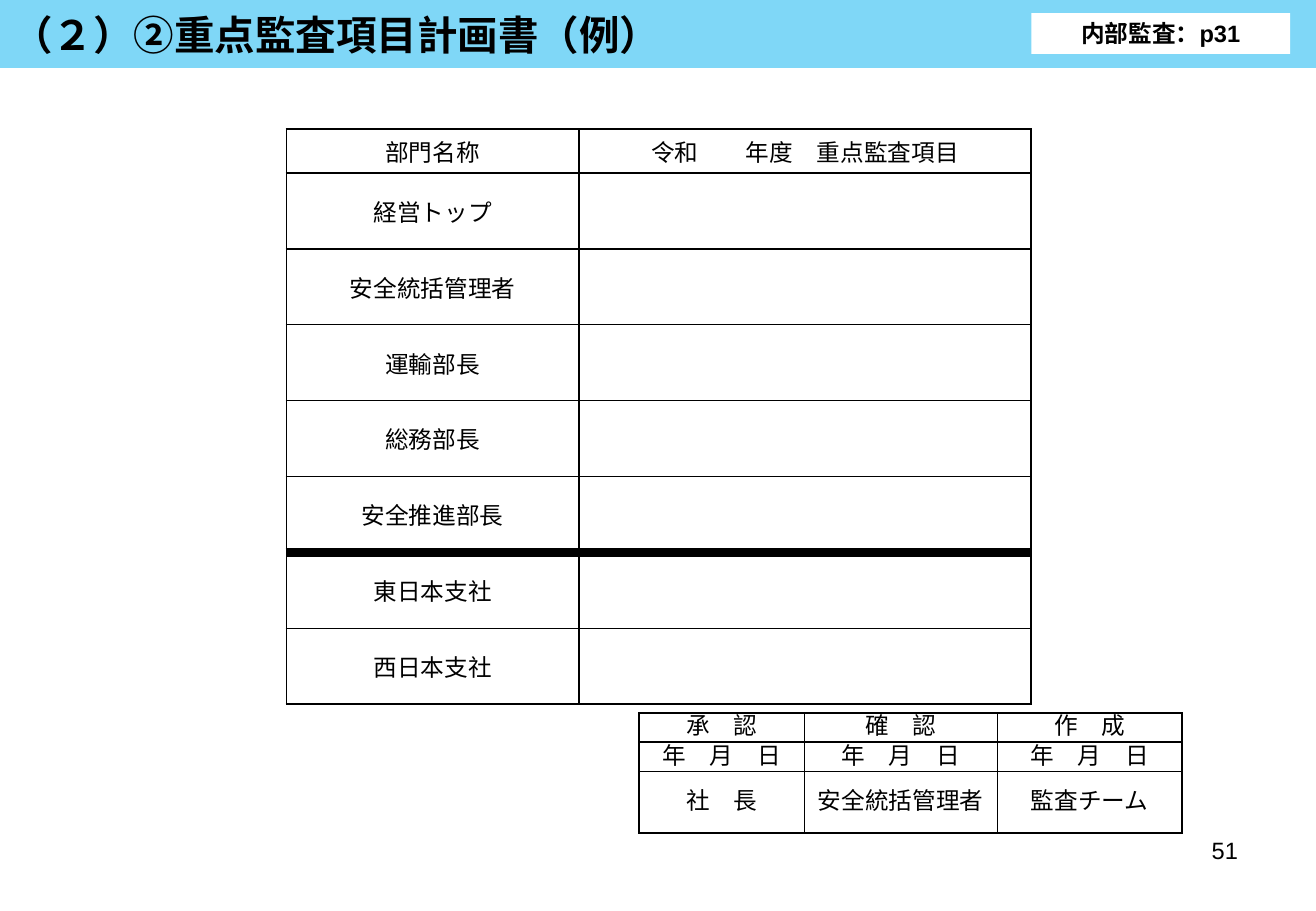
from collections import namedtuple
from dataclasses import dataclass

from lxml import etree
from pptx import Presentation
from pptx.dml.color import RGBColor
from pptx.enum.shapes import MSO_SHAPE
from pptx.enum.text import MSO_ANCHOR, MSO_AUTO_SIZE, PP_ALIGN
from pptx.oxml.ns import qn
from pptx.util import Pt

LEFT, CENTER, RIGHT = PP_ALIGN.LEFT, PP_ALIGN.CENTER, PP_ALIGN.RIGHT
TOP, MIDDLE = MSO_ANCHOR.TOP, MSO_ANCHOR.MIDDLE
RECTANGLE = MSO_SHAPE.RECTANGLE
NO_AUTOFIT = MSO_AUTO_SIZE.NONE
TITLE_ONLY = 5

Box = namedtuple("Box", "left top width height")


@dataclass(frozen=True)
class Theme:
    """Colours, fonts, type sizes and line widths of the deck."""
    ink: str = "000000"
    paper: str = "FFFFFF"
    banner: str = "00B0F0"
    banner_alpha: int = 50
    latin: str = "Arial"
    japanese: str = "Noto Sans CJK JP"
    title_size: int = 24
    body_size: int = 14
    thin: float = 1
    header_rule: float = 1.5
    branch_rule: float = 6
    cell_inset: float = 5


THEME = Theme()

DEPARTMENTS = ["経営トップ", "安全統括管理者", "運輸部長", "総務部長",
               "安全推進部長", "東日本支社", "西日本支社"]
PLAN_ROWS = [["部門名称", "令和　　年度　重点監査項目"]] + [[name, ""] for name in DEPARTMENTS]
PLAN_RULES = {1: THEME.header_rule, 6: THEME.branch_rule}
APPROVAL_ROWS = [["承　認", "確　認", "作　成"],
                 ["年　月　日"] * 3,
                 ["社　長", "安全統括管理者", "監査チーム"]]


def points(box):
    """Turn a box of point values into lengths."""
    return [Pt(value) for value in box]


def format_text(frame, align, size, latin=THEME.latin, bold=False):
    """Align the paragraphs and style every run."""
    for para in frame.paragraphs:
        para.alignment = align
        for span in para.runs:
            span.font.size = Pt(size)
            span.font.bold = bold
            span.font.name = latin
            span.font.color.rgb = RGBColor.from_string(THEME.ink)
            east_asian = etree.Element(qn("a:ea"), typeface=THEME.japanese)
            span.font._element.find(qn("a:latin")).addnext(east_asian)


def add_banner(page, box):
    """Place the title on a translucent band."""
    title = page.shapes.title
    title.left, title.top, title.width, title.height = points(box)
    title.fill.solid()
    title.fill.fore_color.rgb = RGBColor.from_string(THEME.banner)
    colour = title._element.find(".//" + qn("a:srgbClr"))
    etree.SubElement(colour, qn("a:alpha"), val=str(THEME.banner_alpha * 1000))
    frame = title.text_frame
    frame.text = "（２）②重点監査項目計画書（例）"
    frame.auto_size = NO_AUTOFIT
    frame.vertical_anchor = MIDDLE
    format_text(frame, LEFT, THEME.title_size, bold=True)


def add_reference(page, box):
    """Place the white label that names the manual page."""
    label = page.shapes.add_shape(RECTANGLE, *points(box))
    label.shadow.inherit = False
    label.fill.solid()
    label.fill.fore_color.rgb = RGBColor.from_string(THEME.paper)
    label.line.fill.background()
    label.text_frame.text = "内部監査：p31"
    label.text_frame.vertical_anchor = MIDDLE
    format_text(label.text_frame, CENTER, THEME.body_size, bold=True)


def add_page_number(page, box):
    """Place the page number at the right of its box."""
    frame = page.shapes.add_textbox(*points(box)).text_frame
    frame.word_wrap = True
    frame.vertical_anchor = TOP
    frame.text = "51"
    format_text(frame, RIGHT, THEME.body_size)


def draw_borders(cell, top, bottom):
    """Rule all four sides of a cell."""
    properties = cell._tc.get_or_add_tcPr()
    sides = {"L": THEME.thin, "R": THEME.thin, "T": top, "B": bottom}
    for side, width in sides.items():
        line = etree.SubElement(properties, qn("a:ln" + side), w=str(Pt(width)))
        fill = etree.SubElement(line, qn("a:solidFill"))
        etree.SubElement(fill, qn("a:srgbClr"), val=THEME.ink)


def add_grid(page, box, rows, widths, heights, rules, line_height=None):
    """Place a ruled table whose rules map a row to the width above it."""
    table = page.shapes.add_table(len(rows), len(widths), *points(box)).table
    table.first_row = False
    table.horz_banding = False
    for column, width in zip(table.columns, widths):
        column.width = Pt(width)
    for index, (row, height, texts) in enumerate(zip(table.rows, heights, rows)):
        row.height = Pt(height)
        top = rules.get(index, THEME.thin)
        bottom = rules.get(index + 1, THEME.thin)
        for cell, text in zip(row.cells, texts):
            draw_borders(cell, top, bottom)
            cell.fill.background()
            cell.vertical_anchor = MIDDLE
            cell.margin_left = cell.margin_right = Pt(THEME.cell_inset)
            cell.margin_top = cell.margin_bottom = 0
            cell.text_frame.text = text
            format_text(cell.text_frame, CENTER, THEME.body_size, THEME.japanese)
            if line_height:
                cell.text_frame.paragraphs[0].line_spacing = Pt(line_height)


def add_plan(page, box):
    """Place the table of audit items by department."""
    name_width = 173.5
    header_height = 26
    row_height = (box.height - header_height) / len(DEPARTMENTS)
    add_grid(page, box, PLAN_ROWS, [name_width, box.width - name_width],
             [header_height] + [row_height] * len(DEPARTMENTS), PLAN_RULES)


def add_approval(page, box):
    """Place the sign-off table."""
    short_row = 17.3
    add_grid(page, box, APPROVAL_ROWS, [98, 114.5, box.width - 212.5],
             [short_row, short_row, box.height - 2 * short_row], {}, line_height=17)


def main():
    """Build the slide and save the deck."""
    deck = Presentation()
    deck.slide_width, deck.slide_height = Pt(780), Pt(540)
    page = deck.slides.add_slide(deck.slide_layouts[TITLE_ONLY])
    add_banner(page, Box(0, 0, 780, 40.3))
    add_page_number(page, Box(558.7, 491.8, 182.2, 37.4))
    add_plan(page, Box(169.7, 76.5, 441.5, 341))
    add_approval(page, Box(378.7, 422.6, 322, 71.3))
    add_reference(page, Box(611.3, 7.8, 153.4, 24.2))
    deck.save("out.pptx")


if __name__ == "__main__":
    main()
